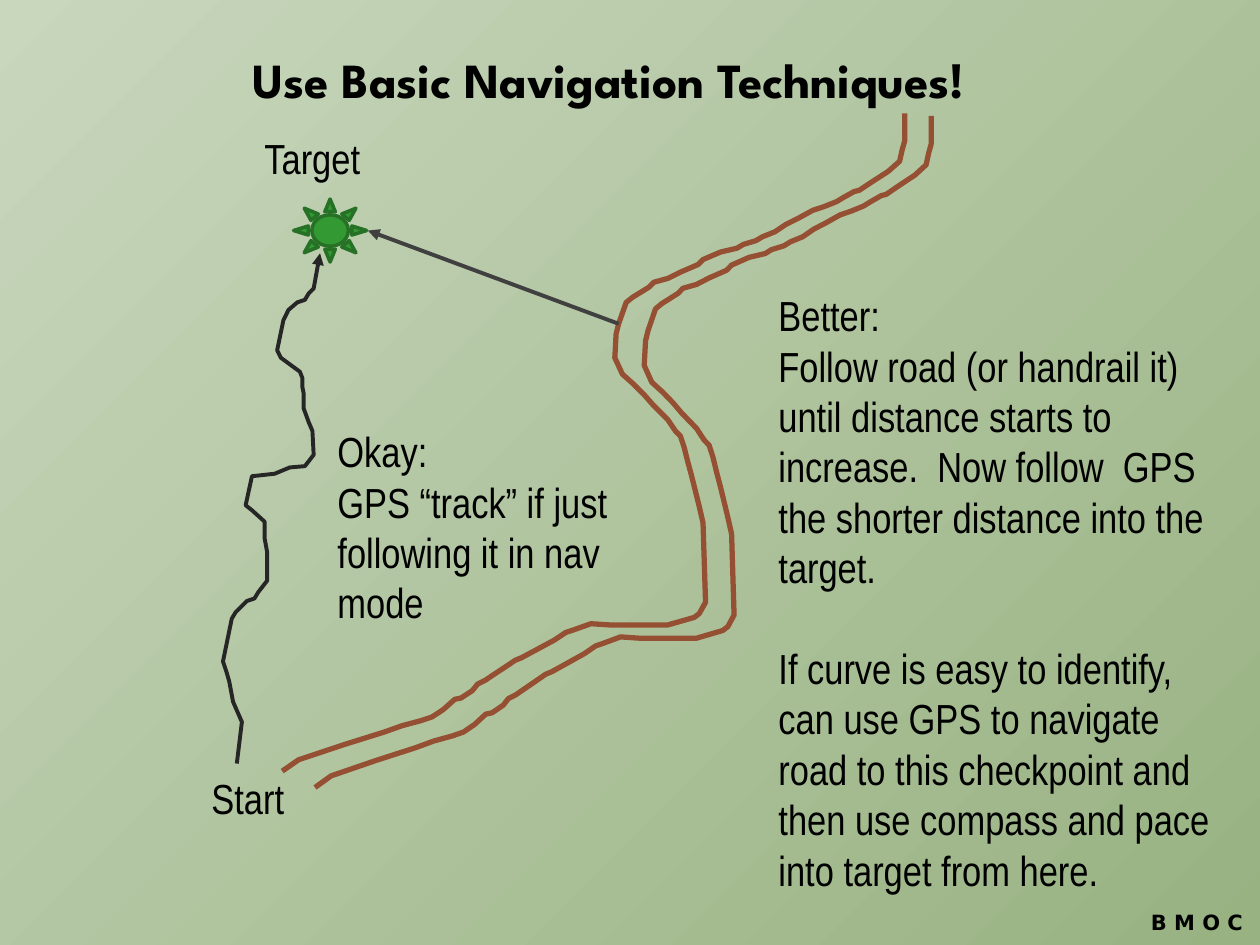
from lxml import etree
from pptx import Presentation
from pptx import util as u
from pptx.dml.color import RGBColor
from pptx.enum import shapes, text
from pptx.oxml.ns import qn

BLACK = RGBColor(0x00, 0x00, 0x00)
PALE_GREEN = RGBColor(0xC9, 0xD7, 0xBD)
SAGE = RGBColor(0x98, 0xB2, 0x82)
TARGET_GREEN = RGBColor(0x33, 0x99, 0x33)
TARGET_EDGE = RGBColor(0x26, 0x71, 0x26)
ROAD_BROWN = RGBColor(0x95, 0x4F, 0x33)
TRACK_BLACK = RGBColor(0x26, 0x26, 0x26)
BEARING_GREY = RGBColor(0x40, 0x40, 0x40)

# Inches from the top left corner of the left road edge.
ROAD_SIZE = (4.97, 5.22)
ROAD_POINTS = [
    (0, 5.22), (0.13, 5.13), (0.49, 5.01), (0.81, 4.91), (0.95, 4.86),
    (1.1, 4.82), (1.19, 4.79), (1.28, 4.73), (1.37, 4.65), (1.42, 4.64),
    (1.51, 4.58), (1.55, 4.53), (1.61, 4.5), (1.67, 4.46), (1.76, 4.4),
    (1.85, 4.34), (1.9, 4.32), (2.03, 4.25), (2.16, 4.18), (2.25, 4.12),
    (2.31, 4.1), (2.45, 4.05), (2.6, 4.06), (3.06, 4.06), (3.27, 4),
    (3.31, 3.97), (3.36, 3.88), (3.34, 3.25), (3.31, 3.12), (3.28, 3),
    (3.25, 2.88), (3.22, 2.77), (3.19, 2.65), (3.16, 2.56), (3.12, 2.52),
    (3.06, 2.43), (2.94, 2.31), (2.87, 2.23), (2.79, 2.15), (2.7, 2.07),
    (2.64, 1.94), (2.65, 1.75), (2.67, 1.67), (2.73, 1.5), (2.78, 1.46),
    (2.91, 1.38), (2.95, 1.34), (3.06, 1.31), (3.16, 1.26), (3.3, 1.2),
    (3.34, 1.16), (3.48, 1.1), (3.61, 1.07), (3.66, 1.04), (3.76, 1.01),
    (3.81, 0.98), (3.91, 0.94), (4, 0.88), (4.1, 0.83), (4.21, 0.77),
    (4.3, 0.74), (4.4, 0.7), (4.45, 0.67), (4.54, 0.62), (4.58, 0.61),
    (4.67, 0.55), (4.81, 0.46), (4.9, 0.38), (4.92, 0.29), (4.94, 0.22),
    (4.94, 0)]

# Inches from the top left corner of the track.
TRACK_SIZE = (0.77, 4.05)
TRACK_POINTS = [
    (0.11, 4.05), (0.15, 3.72), (0.08, 3.56), (0.05, 3.4), (0.03, 3.33),
    (0, 3.24), (0.07, 2.9), (0.1, 2.85), (0.19, 2.76), (0.25, 2.74),
    (0.28, 2.69), (0.35, 2.6), (0.35, 2.37), (0.33, 2.26), (0.33, 2.13),
    (0.23, 2.04), (0.18, 2), (0.23, 1.77), (0.41, 1.75), (0.53, 1.7),
    (0.65, 1.69), (0.72, 1.6), (0.71, 1.41), (0.68, 1.34), (0.64, 1.23),
    (0.64, 1.11), (0.63, 1.06), (0.63, 0.99), (0.61, 0.94), (0.46, 0.83),
    (0.43, 0.77), (0.48, 0.53), (0.52, 0.45), (0.59, 0.39), (0.65, 0.37),
    (0.68, 0.32), (0.72, 0.28), (0.77, 0)]


def add_path(slide, points, size, box, color, width):
    """Draw an open line, scaling points laid out in size to fit box."""
    left, top, box_width, box_height = box
    placed = [(u.Inches(left + x * box_width / size[0]),
               u.Inches(top + y * box_height / size[1])) for x, y in points]
    builder = slide.shapes.build_freeform(*placed[0])
    builder.add_line_segments(placed[1:], close=False)
    shape = builder.convert_to_shape()
    shape.shadow.inherit = False
    shape.fill.background()
    shape.line.color.rgb = color
    shape.line.width = u.Pt(width)
    return shape


def add_arrowhead(shape, end):
    line = shape.line._get_or_add_ln()
    etree.SubElement(line, qn(f"a:{end}"), type="triangle")


def add_text(slide, box, *lines, size=24, font="Arial Narrow", bold=False,
             align=text.PP_ALIGN.LEFT, anchor=text.MSO_ANCHOR.TOP, grow=True):
    text_box = slide.shapes.add_textbox(*map(u.Inches, box))
    frame = text_box.text_frame
    frame.word_wrap = True
    frame.vertical_anchor = anchor
    if grow:
        frame.auto_size = text.MSO_AUTO_SIZE.SHAPE_TO_FIT_TEXT
    frame.text = "\n".join(lines)
    for paragraph in frame.paragraphs:
        paragraph.alignment = align
        for run in paragraph.runs:
            run.font.name = font
            run.font.size = u.Pt(size)
            run.font.bold = bold
            run.font.color.rgb = BLACK
    return frame


def fill_background(slide):
    fill = slide.background.fill
    fill.gradient()
    fill.gradient_angle = 315
    for stop, color in zip(fill.gradient_stops, (PALE_GREEN, SAGE)):
        stop.color.rgb = color


def add_title_and_footer(slide):
    add_text(slide, (0.58, 0, 8.5, 1.25), "Use Basic Navigation Techniques!",
             size=28, font="League Spartan", bold=True, grow=False,
             align=text.PP_ALIGN.CENTER, anchor=text.MSO_ANCHOR.MIDDLE)
    add_text(slide, (9, 7.17, 1, 0.33), "B M O C", size=12, font="DejaVu Sans",
             bold=True, grow=False, align=text.PP_ALIGN.CENTER)


def add_target(slide, box):
    sun = slide.shapes.add_shape(shapes.MSO_SHAPE.SUN, *map(u.Inches, box))
    sun.shadow.inherit = False
    sun.fill.solid()
    sun.fill.fore_color.rgb = TARGET_GREEN
    sun.line.color.rgb = TARGET_EDGE
    sun.line.width = u.Pt(2)


def add_bearing(slide, start, end):
    """Draw the straight arrow from the road to the target."""
    bearing = slide.shapes.add_connector(
        shapes.MSO_CONNECTOR.STRAIGHT, *map(u.Inches, (*end, *start)))
    bearing.line.color.rgb = BEARING_GREY
    bearing.line.width = u.Pt(2.25)
    add_arrowhead(bearing, "headEnd")
    etree.SubElement(bearing._element.spPr, qn("a:effectLst"))


def add_map(slide):
    add_target(slide, (2.33, 1.58, 0.58, 0.5))
    for box in ((2.24, 0.9, 4.97, 5.22), (2.5, 0.92, 4.92, 5.33)):
        add_path(slide, ROAD_POINTS, ROAD_SIZE, box, ROAD_BROWN, 3)
    track = add_path(slide, TRACK_POINTS, TRACK_SIZE, (1.77, 2.01, *TRACK_SIZE),
                     TRACK_BLACK, 2.25)
    add_arrowhead(track, "tailEnd")
    add_bearing(slide, (4.91, 2.57), (2.92, 1.83))
    add_text(slide, (2, 1, 1.08, 0.5), "Target")
    add_text(slide, (1.58, 6.08, 0.92, 0.51), "Start")


def add_advice(slide):
    add_text(slide, (2.58, 3.33, 2.83, 1.72), "Okay:",
             "GPS “track” if just following it in nav mode")
    better = add_text(
        slide, (6.08, 2.25, 3.67, 4.95), "Better:",
        "Follow road (or handrail it) until distance starts to increase.  "
        "Now follow  GPS the shorter distance into the target.",
        "If curve is easy to identify, can use GPS to navigate road to this "
        "checkpoint and then use compass and pace into target from here.")
    better.paragraphs[-1].space_before = u.Pt(28.75)


def main():
    presentation = Presentation()
    presentation.slide_width = u.Inches(10)
    presentation.slide_height = u.Inches(7.5)
    slide = presentation.slides.add_slide(presentation.slide_layouts[6])
    fill_background(slide)
    add_title_and_footer(slide)
    add_map(slide)
    add_advice(slide)
    presentation.save("out.pptx")


if __name__ == "__main__":
    main()
